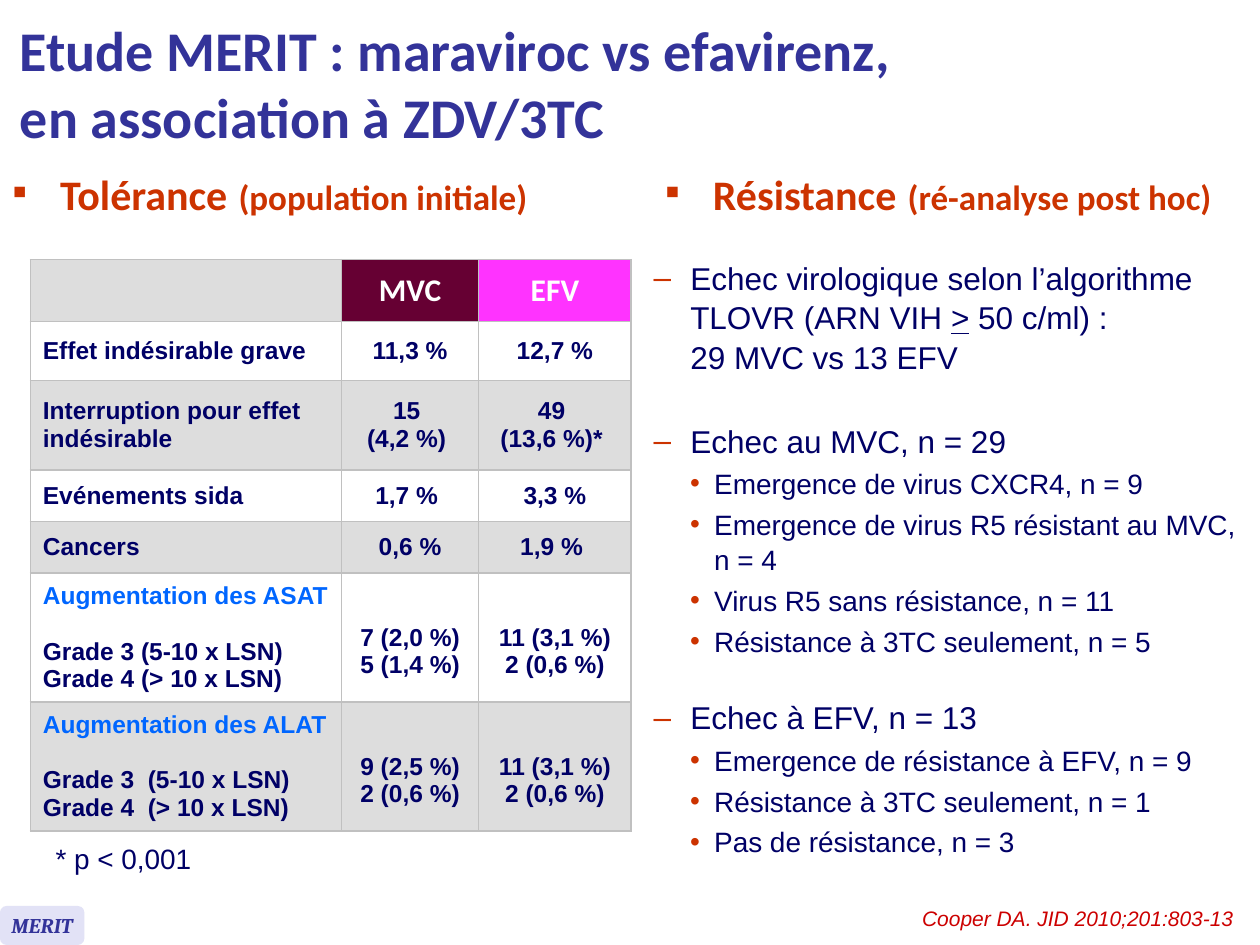
from copy import deepcopy

from lxml import etree
from pptx import Presentation
from pptx.dml.color import RGBColor
from pptx.enum.shapes import MSO_SHAPE
from pptx.enum.text import MSO_ANCHOR, PP_ALIGN
from pptx.oxml.ns import qn
from pptx.util import Inches, Pt

LEFT, CENTER, RIGHT = PP_ALIGN.LEFT, PP_ALIGN.CENTER, PP_ALIGN.RIGHT
TOP, MIDDLE = MSO_ANCHOR.TOP, MSO_ANCHOR.MIDDLE
ROUNDED = MSO_SHAPE.ROUNDED_RECTANGLE

COLORS = {
    "indigo": "333399", "navy": "000066", "rust": "CC3300", "red": "CC0000",
    "azure": "0066FF", "white": "FFFFFF", "gray": "DDDDDD", "border": "C0C0C0",
    "plum": "660033", "magenta": "FF33FF", "lavender": "E2E2F6",
}


def rgb(name):
    return RGBColor.from_string(COLORS[name])


def font(size, color, name="Arial", **extra):
    return {"size": Pt(size), "name": name, "color": color, **extra}


TITLE = font(32, "indigo", "Calibri", bold=True)
HEADING = font(24, "rust", "Calibri", bold=True)
HEADING_GAP = {**HEADING, "size": Pt(28)}
HEADING_NOTE = {**HEADING, "size": Pt(20)}
COLUMN_HEAD = font(18, "white", "Calibri", bold=True)
CELL = font(14, "navy", bold=True)
CELL_TITLE = {**CELL, "color": "azure"}
ITEM = font(18, "navy")
UNDERLINED = {**ITEM, "underline": True}
SUBITEM = font(16, "navy")
TAG = font(12, "indigo", "Cambria", bold=True, italic=True)
CITATION = font(12, "red", italic=True)

MAIN_BULLET = ("▪", 0.38, 0.38)
DASH = ("–", 0.29, 0.29)
DOT = ("•", 0.48, 0.19)


def para(*runs, **layout):
    return {"runs": runs, **layout}


class SlideBuilder:
    def __init__(self, slide):
        self.slide = slide

    def bullet(self, paragraph, mark, indent, hanging):
        props = paragraph._p.get_or_add_pPr()
        props.set("marL", str(Inches(indent)))
        props.set("indent", str(-Inches(hanging)))
        color = etree.SubElement(props, qn("a:buClr"))
        etree.SubElement(color, qn("a:srgbClr"), val=COLORS["rust"])
        etree.SubElement(props, qn("a:buFont"), typeface="Arial")
        etree.SubElement(props, qn("a:buChar"), char=mark)

    def run(self, paragraph, text, style):
        for index, line in enumerate(text.split("\n")):
            if index:
                paragraph.add_line_break()
            run = paragraph.add_run()
            run.text = line
            for key, value in style.items():
                if key == "color":
                    run.font.color.rgb = rgb(value)
                else:
                    setattr(run.font, key, value)
            if index:
                run._r.getprevious().append(deepcopy(run._r.rPr))

    def fill_text(self, frame, paragraphs):
        for index, content in enumerate(paragraphs):
            paragraph = frame.paragraphs[0] if index == 0 else frame.add_paragraph()
            paragraph.alignment = content.get("align", LEFT)
            paragraph.line_spacing = content.get("spacing", 1.0)
            paragraph.space_before = Pt(content.get("before", 0))
            if "bullet" in content:
                self.bullet(paragraph, *content["bullet"])
            for text, style in content["runs"]:
                self.run(paragraph, text, style)

    def text(self, box, paragraphs, anchor=TOP, wrap=True):
        frame = self.slide.shapes.add_textbox(*map(Inches, box)).text_frame
        frame.word_wrap = wrap
        frame.vertical_anchor = anchor
        self.fill_text(frame, paragraphs)

    def tag(self, box, label):
        shape = self.slide.shapes.add_shape(ROUNDED, *map(Inches, box))
        shape.shadow.inherit = False
        shape.fill.solid()
        shape.fill.fore_color.rgb = rgb("lavender")
        shape.line.fill.background()
        shape.text_frame.word_wrap = False
        shape.text_frame.vertical_anchor = MIDDLE
        self.fill_text(shape.text_frame, [para((label, TAG), align=CENTER)])

    def borders(self, cell):
        props = cell._tc.get_or_add_tcPr()
        for index, side in enumerate(("lnL", "lnR", "lnT", "lnB")):
            line = etree.Element(qn(f"a:{side}"), w=str(Pt(1)))
            fill = etree.SubElement(line, qn("a:solidFill"))
            etree.SubElement(fill, qn("a:srgbClr"), val=COLORS["border"])
            props.insert(index, line)

    def table(self, box, widths, heights, rows, header_fills):
        table = self.slide.shapes.add_table(
            len(rows), len(widths), *map(Inches, box)).table
        for column, width in zip(table.columns, widths):
            column.width = Inches(width)
        for r, (height, row) in enumerate(zip(heights, rows)):
            table.rows[r].height = Inches(height)
            for c, paragraphs in enumerate(row):
                cell = table.cell(r, c)
                cell.vertical_anchor = MIDDLE
                cell.fill.solid()
                band = "white" if r % 2 else "gray"
                cell.fill.fore_color.rgb = rgb(band if r else header_fills[c])
                self.borders(cell)
                self.fill_text(cell.text_frame, paragraphs)
                if c and len(row[0]) > 1:
                    cell.margin_top = Inches(0.27)


def centered(text, style=CELL):
    return [para((text, style), align=CENTER)]


def result_row(label, mvc, efv):
    return [[para((label, CELL))], centered(mvc), centered(efv)]


def grade_row(title, grades, mvc, efv):
    label = [para((title, CELL_TITLE)), para((grades, CELL), before=16)]
    return [label, centered(mvc), centered(efv)]


def heading(title, note):
    return [para((title, HEADING), (" ", HEADING_GAP), (note, HEADING_NOTE),
                 bullet=MAIN_BULLET)]


def item(*runs, before=0):
    return para(*runs, bullet=DASH, before=before, spacing=1.05)


def subitems(*texts):
    return [para((text, SUBITEM), bullet=DOT, before=3.2, spacing=1.05)
            for text in texts]


def main():
    deck = Presentation()
    deck.slide_width, deck.slide_height = Inches(10), Inches(7.5)
    builder = SlideBuilder(deck.slides.add_slide(deck.slide_layouts[6]))

    builder.text((0.06, 0.05, 8.96, 1.21), [para((
        "Etude MERIT : maraviroc vs efavirenz,\nen association à ZDV/3TC",
        TITLE))], anchor=MIDDLE)
    builder.text((0, 1.23, 5.03, 0.71),
                 heading("Tolérance", "(population initiale)"))

    tolerance = [
        [[], centered("MVC", COLUMN_HEAD), centered("EFV", COLUMN_HEAD)],
        result_row("Effet indésirable grave", "11,3 %", "12,7 %"),
        result_row("Interruption pour effet indésirable",
                   "15 \n(4,2 %) ", "49 \n(13,6 %)* "),
        result_row("Evénements sida", "1,7 % ", "3,3 %"),
        result_row("Cancers", "0,6 %", "1,9 % "),
        grade_row("Augmentation des ASAT",
                  "Grade 3 (5-10 x LSN)\nGrade 4 (> 10 x LSN)",
                  "7 (2,0 %)\n5 (1,4 %)", "11 (3,1 %)\n2 (0,6 %)"),
        grade_row("Augmentation des ALAT",
                  "Grade 3  (5-10 x LSN)\nGrade 4  (> 10 x LSN)",
                  "9 (2,5 %)\n2 (0,6 %)", "11 (3,1 %)\n2 (0,6 %)"),
    ]
    builder.table((0.24, 2.06, 4.77, 4.51), (2.47, 1.09, 1.21),
                  (0.49, 0.47, 0.71, 0.41, 0.41, 1.01, 1.01),
                  tolerance, ("gray", "plum", "magenta"))
    builder.text((0.34, 6.63, 1.28, 0.37),
                 [para(("* p < 0,001", SUBITEM), align=CENTER)], wrap=False)

    builder.text((5.09, 1.99, 4.94, 5.14), [
        item(("Echec virologique selon l’algorithme TLOVR (ARN VIH ", ITEM),
             (">", UNDERLINED), (" 50 c/ml) :\n29 MVC vs 13 EFV", ITEM)),
        item(("Echec au MVC, n = 29", ITEM), before=25),
        *subitems("Emergence de virus CXCR4, n = 9",
                  "Emergence de virus R5 résistant au MVC, n = 4",
                  "Virus R5 sans résistance, n = 11",
                  "Résistance à 3TC seulement, n = 5"),
        item(("Echec à EFV, n = 13", ITEM), before=22),
        *subitems("Emergence de résistance à EFV, n = 9",
                  "Résistance à 3TC seulement, n = 1",
                  "Pas de résistance, n = 3"),
    ])
    builder.text((5.18, 1.23, 4.83, 0.88),
                 heading("Résistance", "(ré-analyse post hoc)"))

    builder.tag((0, 7.19, 0.67, 0.31), "MERIT")
    builder.text((6.39, 7.14, 3.5, 0.3),
                 [para(("Cooper DA. JID 2010;201:803-13", CITATION), align=RIGHT)])
    deck.save("out.pptx")


if __name__ == "__main__":
    main()
